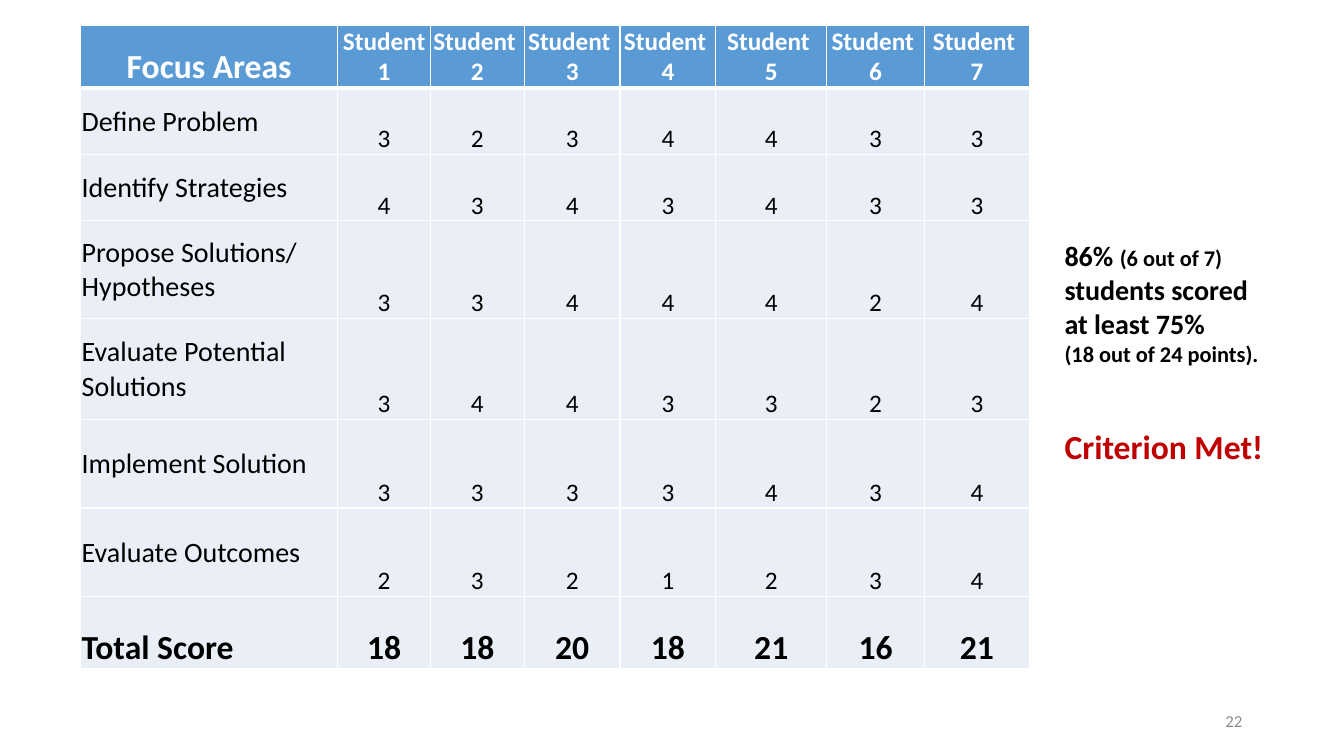
from lxml.etree import SubElement
from pptx import Presentation
from pptx.dml.color import RGBColor
from pptx.enum.text import MSO_ANCHOR, PP_ALIGN
from pptx.oxml.ns import qn
from pptx.util import Inches, Pt


def add_run(paragraph, text, size, color="000000", bold=False):
    run = paragraph.add_run()
    run.text = text
    run.font.name = "Calibri"
    run.font.size = Pt(size)
    run.font.bold = bold
    run.font.color.rgb = RGBColor.from_string(color)


def add_border(cell, side, width):
    line = SubElement(cell._tc.get_or_add_tcPr(), qn(f"a:ln{side}"), w=str(Pt(width)))
    fill = SubElement(line, qn("a:solidFill"))
    SubElement(fill, qn("a:srgbClr"), val="FFFFFF")


deck = Presentation()
deck.slide_width, deck.slide_height = Inches(13.33), Inches(7.5)
slide = deck.slides.add_slide(deck.slide_layouts[6])

focus_areas = {
    "Define Problem": [3, 2, 3, 4, 4, 3, 3],
    "Identify Strategies": [4, 3, 4, 3, 4, 3, 3],
    "Propose Solutions/\nHypotheses": [3, 3, 4, 4, 4, 2, 4],
    "Evaluate Potential Solutions": [3, 4, 4, 3, 3, 2, 3],
    "Implement Solution": [3, 3, 3, 3, 4, 3, 4],
    "Evaluate Outcomes": [2, 3, 2, 1, 2, 3, 4],
}
students = ["Student\n1"] + [f"Student \n{number}" for number in range(2, 8)]
totals = [sum(scores) for scores in zip(*focus_areas.values())]
rows = [["Focus Areas", *students]]
rows += [[area, *scores] for area, scores in focus_areas.items()]
rows.append(["Total Score", *totals])

column_widths = [2.55, 0.92, 0.93, 0.95, 0.95, 1.1, 0.97, 1.04]
row_heights = [0.6, 0.66, 0.66, 0.97, 1, 0.88, 0.88, 0.71]
score_table = slide.shapes.add_table(
    len(rows), len(column_widths), Inches(0.8), Inches(0.25),
    Inches(sum(column_widths)), Inches(sum(row_heights))).table
score_table.horz_banding = False
for column, width in zip(score_table.columns, column_widths):
    column.width = Inches(width)
for row, height in zip(score_table.rows, row_heights):
    row.height = Inches(height)

last = len(rows) - 1
for r, row in enumerate(rows):
    for c, value in enumerate(row):
        cell = score_table.cell(r, c)
        is_header, is_total, is_label = r == 0, r == last, c == 0
        cell.margin_left = cell.margin_right = cell.margin_top = Inches(0.01)
        cell.margin_bottom = 0
        is_area = is_label and 0 < r < last
        cell.vertical_anchor = MSO_ANCHOR.MIDDLE if is_area else MSO_ANCHOR.BOTTOM
        for side in "LRTB":
            under_header = (r, side) in [(0, "B"), (1, "T")]
            add_border(cell, side, 3 if under_header else 1)
        cell.fill.solid()
        cell.fill.fore_color.rgb = RGBColor.from_string("5B9BD5" if is_header else "EAEFF7")

        if is_total or (is_header and is_label):
            size = 24
        else:
            size = 20 if is_label else 18
        for i, text in enumerate(str(value).split("\n")):
            paragraph = cell.text_frame.paragraphs[0] if i == 0 else cell.text_frame.add_paragraph()
            paragraph.alignment = PP_ALIGN.LEFT if is_label and not is_header else PP_ALIGN.CENTER
            add_run(paragraph, text, size, "FFFFFF" if is_header else "000000", is_header or is_total)

finding = slide.shapes.add_textbox(Inches(10.46), Inches(2.32), Inches(2.24), Inches(1.38)).text_frame
finding.word_wrap = True
share = finding.paragraphs[0]
add_run(share, "86% ", 20, bold=True)
add_run(share, "(6 out of 7) ", 16, bold=True)
add_run(share, "students scored at least 75%", 20, bold=True)
add_run(finding.add_paragraph(), "(18 out of 24 points).", 16, bold=True)

verdict = slide.shapes.add_textbox(Inches(10.46), Inches(4.18), Inches(2.19), Inches(0.5)).text_frame
verdict.word_wrap = False
add_run(verdict.paragraphs[0], "Criterion Met!", 24, "C00000", True)

page_number = slide.shapes.add_textbox(Inches(9.42), Inches(6.95), Inches(3), Inches(0.4)).text_frame
page_number.word_wrap = True
page_number.vertical_anchor = MSO_ANCHOR.MIDDLE
page_number.paragraphs[0].alignment = PP_ALIGN.RIGHT
add_run(page_number.paragraphs[0], "22", 12, "8C8C8C")

deck.save("out.pptx")
